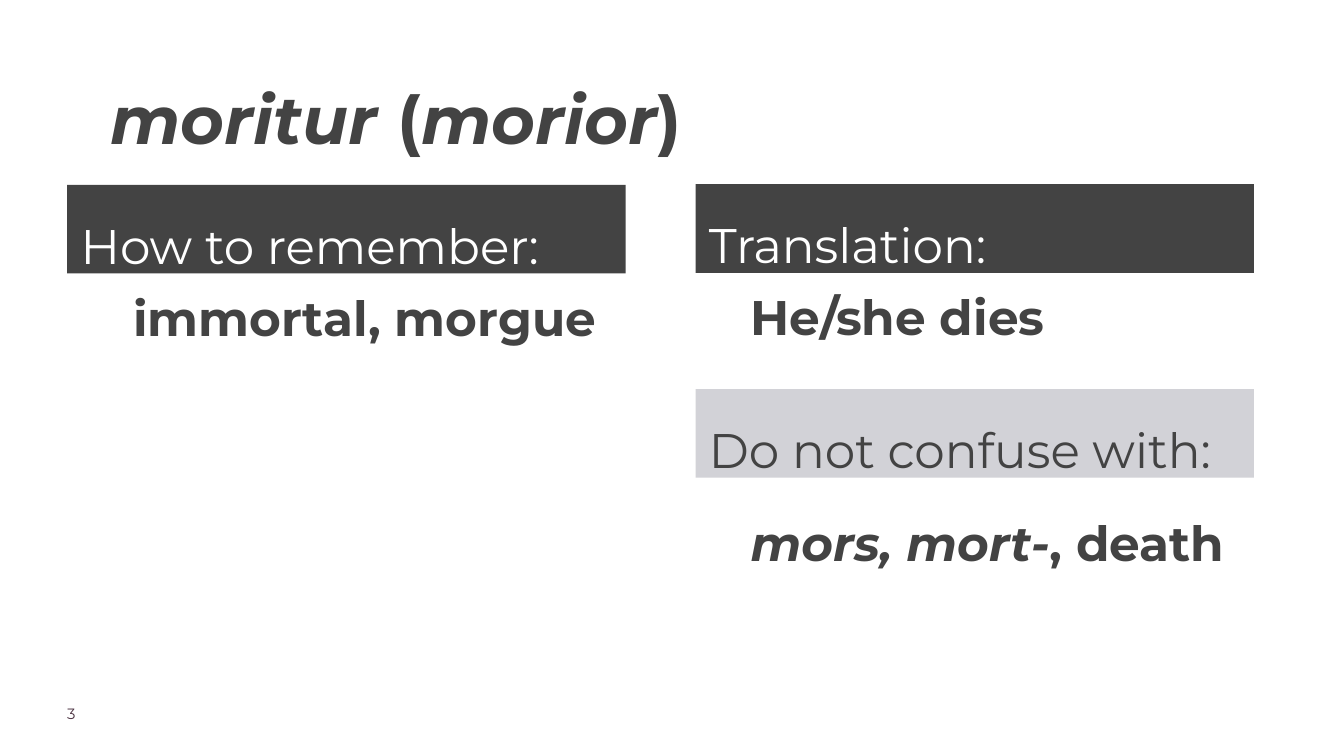
from pptx import Presentation
from pptx.dml.color import RGBColor
from pptx.enum.shapes import MSO_SHAPE
from pptx.enum.text import MSO_ANCHOR, PP_ALIGN
from pptx.util import Pt

DARK, PALE, WHITE, PLUM = "434343", "D2D2D7", "FFFFFF", "4B3241"
LEFT, RIGHT, RIGHT_ANSWER = 72, 745.2, 789.8
BAR_WIDTH, BAR_HEIGHT, INSET = 598.3, 95, 14.4

TITLE = [("moritur ", True), ("(", False), ("morior", True), (")", False)]
HEADINGS = [
    ("How to remember:", LEFT, 198, DARK, WHITE),
    ("Translation:", RIGHT, 197.3, DARK, WHITE),
    ("Do not confuse with:", RIGHT, 416.9, PALE, DARK),
]
ANSWERS = [
    ([("immortal, morgue", False)], 128.2, 293.8, 625.7, 1.0),
    ([("He/she dies", False)], RIGHT_ANSWER, 293, 552.2, 1.0),
    ([("mors, mort-", True), (", death", False)], RIGHT_ANSWER, 517, 552.2, 1.3),
]
PAGE_NUMBER = "3"


def color(value):
    """Turn a hex string into a colour."""
    return RGBColor.from_string(value)


def write(shape, spans, size, ink, spacing=1.0, inset=INSET, bold=False):
    """Put one formatted, top-left paragraph into a shape."""
    frame = shape.text_frame
    layout = {"word_wrap": True, "vertical_anchor": MSO_ANCHOR.TOP}
    layout.update({f"margin_{side}": Pt(inset) for side in ("left", "top", "right", "bottom")})
    for name, value in layout.items():
        setattr(frame, name, value)
    para = frame.paragraphs[0]
    for name, value in {"alignment": PP_ALIGN.LEFT, "line_spacing": spacing}.items():
        setattr(para, name, value)
    for text, italic in spans:
        span = para.add_run()
        span.text = text
        style = {"name": "Montserrat", "size": Pt(size), "bold": bold, "italic": italic}
        for name, value in style.items():
            setattr(span.font, name, value)
        span.font.color.rgb = color(ink)


def main():
    """Build the vocabulary slide."""
    deck = Presentation()
    deck.slide_width, deck.slide_height = Pt(1440), Pt(810)
    page = deck.slides.add_slide(deck.slide_layouts[5])

    title = page.shapes.title
    place = {"left": 118.1, "top": 69.8, "width": 1249.9, "height": 128.2}
    for name, value in place.items():
        setattr(title, name, Pt(value))
    write(title, TITLE, 72, DARK, 1.15, 0, True)

    for text, left, top, fill, ink in HEADINGS:
        bar = page.shapes.add_shape(
            MSO_SHAPE.RECTANGLE, Pt(left), Pt(top), Pt(BAR_WIDTH), Pt(BAR_HEIGHT))
        bar.shadow.inherit = False
        bar.fill.solid()
        bar.fill.fore_color.rgb = color(fill)
        bar.line.fill.background()
        write(bar, [(text, False)], 52, ink, 1.3)

    for spans, left, top, width, spacing in ANSWERS:
        box = page.shapes.add_textbox(Pt(left), Pt(top), Pt(width), Pt(BAR_HEIGHT))
        write(box, spans, 52, DARK, spacing, bold=True)

    number = page.shapes.add_textbox(Pt(LEFT), Pt(754.6), Pt(113), Pt(28.1))
    write(number, [(PAGE_NUMBER, False)], 16, PLUM, inset=0)
    deck.save("out.pptx")


if __name__ == "__main__":
    main()
